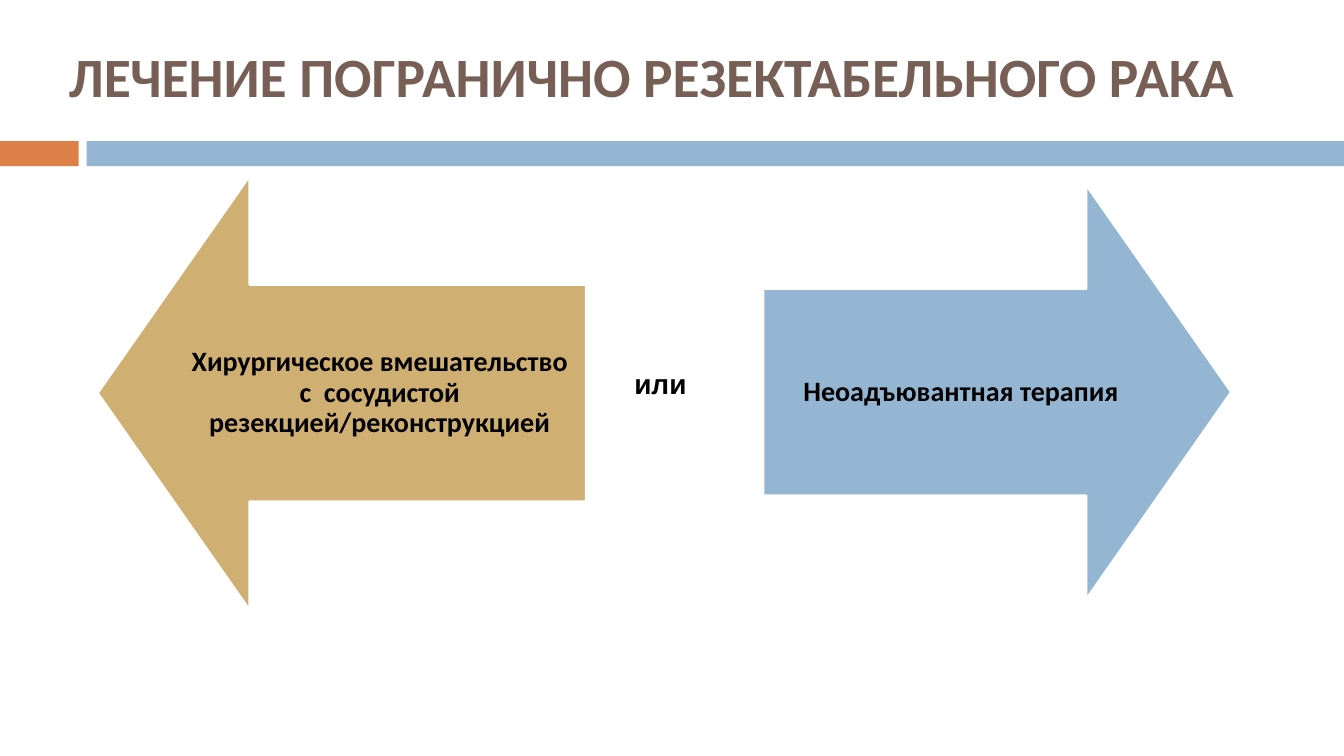
from typing import NamedTuple

from pptx import Presentation
from pptx import util as u
from pptx.dml.color import RGBColor
from pptx.enum import shapes, text

ORANGE = RGBColor(0xDD, 0x80, 0x47)
BLUE = RGBColor(0x94, 0xB6, 0xD2)
SAND = RGBColor(0xD0, 0xAF, 0x72)
BROWN = RGBColor(0x77, 0x5F, 0x55)
BLACK = RGBColor(0, 0, 0)
WHITE = RGBColor(0xFF, 0xFF, 0xFF)

SLIDE_W, SLIDE_H = u.Inches(13.33), u.Inches(7.5)


class Box(NamedTuple):
    """Place on the slide, in percent of its width and height."""
    x: float
    y: float
    w: float
    h: float

    def emu(self) -> tuple[int, int, int, int]:
        return (int(SLIDE_W * self.x / 100), int(SLIDE_H * self.y / 100),
                int(SLIDE_W * self.w / 100), int(SLIDE_H * self.h / 100))


class Bar(NamedTuple):
    box: Box
    color: RGBColor


class Arrow(NamedTuple):
    kind: shapes.MSO_SHAPE
    box: Box
    color: RGBColor
    inset: float
    label: str


BARS = [
    Bar(Box(0, 18.67, 5.85, 3.33), ORANGE),
    Bar(Box(6.45, 18.67, 93.55, 3.33), BLUE),
]
ARROWS = [
    Arrow(shapes.MSO_SHAPE.LEFT_ARROW, Box(7.28, 23.33, 36.31, 57.33), SAND, 0.15,
          "Хирургическое вмешательство с  сосудистой резекцией/реконструкцией"),
    Arrow(shapes.MSO_SHAPE.RIGHT_ARROW, Box(56.79, 24.53, 34.81, 54.67), BLUE, 0.16,
          "Неоадъювантная терапия"),
]
TITLE_BOX = Box(3.9, 2.8, 89.2, 14.4)
OR_BOX = Box(45.01, 47.87, 8.25, 5.87)


def write(sp, label: str, size: float, font: str, color: RGBColor):
    """Put one centred bold paragraph into a shape and return it."""
    tf = sp.text_frame
    tf.word_wrap = True
    p = tf.paragraphs[0]
    p.text = label
    p.alignment = text.PP_ALIGN.CENTER
    p.font.size, p.font.name, p.font.bold = u.Pt(size), font, True
    p.font.color.rgb = color
    return p


def add_filled(s, kind: shapes.MSO_SHAPE, box: Box, color: RGBColor):
    sp = s.shapes.add_shape(kind, *box.emu())
    sp.shadow.inherit = False
    sp.fill.solid()
    sp.fill.fore_color.rgb = color
    sp.line.fill.background()
    return sp


def add_arrow(s, arrow: Arrow) -> None:
    sp = add_filled(s, arrow.kind, arrow.box, arrow.color)
    sp.adjustments[0], sp.adjustments[1] = 0.5, 0.35
    sp.line.color.rgb = WHITE
    sp.line.width = u.Pt(1.5)
    tf = sp.text_frame
    tf.vertical_anchor = text.MSO_ANCHOR.MIDDLE
    tf.margin_left = tf.margin_right = u.Inches(arrow.inset)
    tf.margin_top = tf.margin_bottom = u.Inches(arrow.inset)
    p = write(sp, arrow.label, 20, "Calibri", BLACK)
    p.line_spacing = 0.9


def main() -> None:
    prs = Presentation()
    prs.slide_width, prs.slide_height = SLIDE_W, SLIDE_H
    s = prs.slides.add_slide(prs.slide_layouts[5])

    # Title
    title = s.shapes.title
    title.left, title.top, title.width, title.height = TITLE_BOX.emu()
    title.text_frame.vertical_anchor = text.MSO_ANCHOR.MIDDLE
    write(title, "ЛЕЧЕНИЕ ПОГРАНИЧНО РЕЗЕКТАБЕЛЬНОГО РАКА", 39.6, "Calibri", BROWN)

    # Band under the title
    for bar in BARS:
        add_filled(s, shapes.MSO_SHAPE.RECTANGLE, bar.box, bar.color)

    # Two treatment options
    for arrow in ARROWS:
        add_arrow(s, arrow)
    write(s.shapes.add_textbox(*OR_BOX.emu()), "или", 20, "Arial", BLACK)

    prs.save("out.pptx")


if __name__ == "__main__":
    main()
